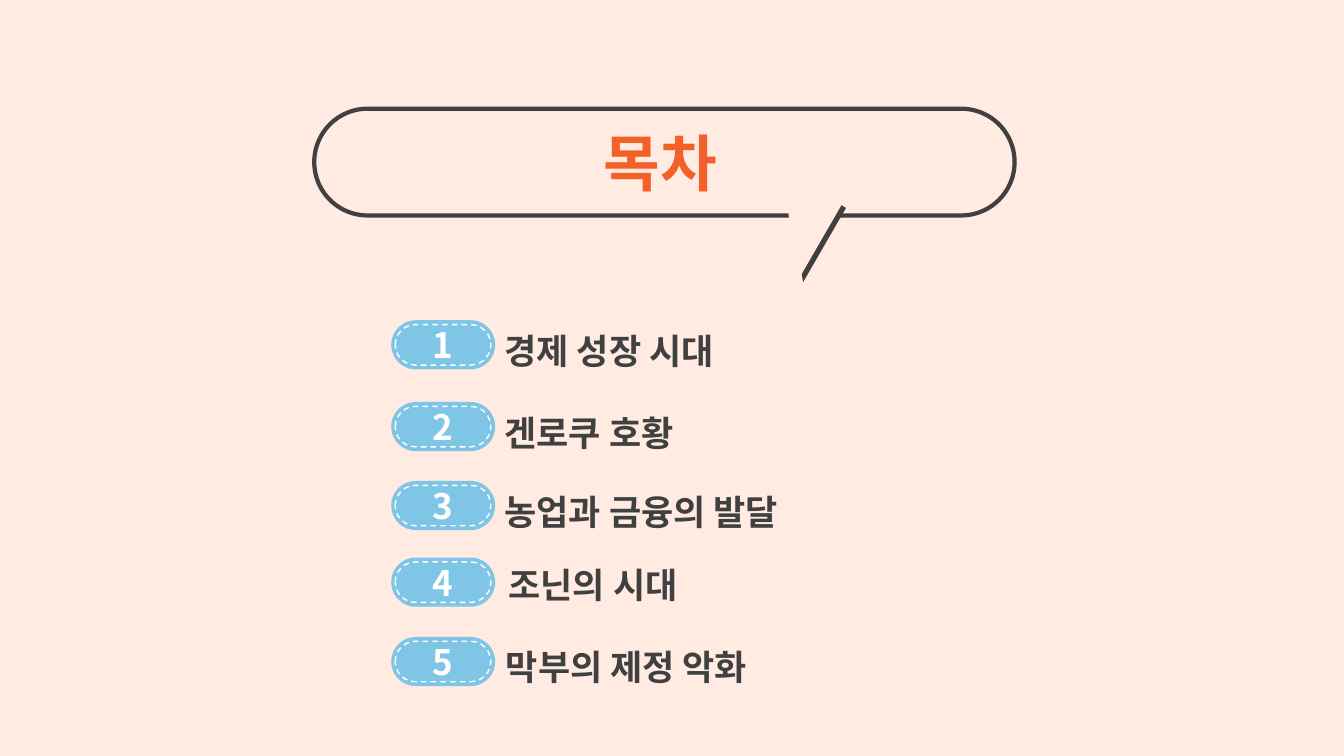
from lxml import etree
from pptx import Presentation, util as u
from pptx.dml.color import RGBColor
from pptx.enum import dml, shapes, text
from pptx.oxml.ns import qn

COLORS = {"paper": "FFEBE2", "ink": "404040", "title": "F46128", "badge": "7FC6E6", "white": "FFFFFF"}


class Deck:
    font = "Noto Sans CJK KR"

    def __init__(self):
        self.prs = Presentation()
        self.prs.slide_width, self.prs.slide_height = u.Cm(33.87), u.Cm(19.05)
        self.slide = self.prs.slides.add_slide(self.prs.slide_layouts[6])
        background = self.slide.background.fill
        background.solid()
        background.fore_color.rgb = self.color("paper")

    def color(self, name):
        return RGBColor.from_string(COLORS[name])

    def group(self):
        return self.slide.shapes.add_group_shape().shapes

    def shape(self, parent, kind, box, adj, fill=None, line=None, width=1, dash=None):
        part = parent.add_shape(kind, *map(u.Cm, box))
        part.adjustments[0] = adj
        part.shadow.inherit = False
        if fill:
            part.fill.solid()
            part.fill.fore_color.rgb = self.color(fill)
        else:
            part.fill.background()
        if line:
            part.line.color.rgb = self.color(line)
            part.line.width = u.Pt(width)
            part.line.dash_style = dash
        else:
            part.line.fill.background()
        return part

    def pill(self, parent, box, **style):
        return self.shape(parent, shapes.MSO_SHAPE.ROUNDED_RECTANGLE, box, 0.5, **style)

    def hard_shadow(self, part, color, distance, angle):
        effects = part._element.spPr.find(qn("a:effectLst"))
        shadow = etree.SubElement(effects, qn("a:outerShdw"), blurRad="0", dist=str(u.Pt(distance)),
                                  dir=str(angle * 60000), algn="tl", rotWithShape="0")
        etree.SubElement(shadow, qn("a:srgbClr"), val=COLORS[color])

    def set_text(self, frame, words, size, color, align):
        paragraph = frame.paragraphs[0]
        paragraph.text = words
        paragraph.alignment = align
        font = paragraph.font
        font.name, font.size, font.bold = self.font, u.Pt(size), True
        font.color.rgb = self.color(color)
        etree.SubElement(font._element, qn("a:ea"), typeface=self.font)

    def label(self, parent, box, words, size, color, align=text.PP_ALIGN.LEFT):
        frame = parent.add_textbox(*map(u.Cm, box)).text_frame
        frame.word_wrap = False
        frame.auto_size = text.MSO_AUTO_SIZE.SHAPE_TO_FIT_TEXT
        self.set_text(frame, words, size, color, align)

    def bubble(self):
        bubble = self.group()
        self.pill(bubble, (7.92, 2.74, 17.65, 2.69), fill="paper", line="ink", width=3)
        tail = self.shape(bubble, shapes.MSO_SHAPE.ISOSCELES_TRIANGLE, (19.02, 4.55, 1.78, 2.16), 0, fill="paper")
        tail.rotation = 210
        self.hard_shadow(tail, "ink", 4, 45)

    def entry(self, number, top, topic, left, label_top, width):
        entry = self.group()
        badge = self.pill(entry, (9.86, top, 2.62, 1.24), fill="badge")
        badge.text_frame.vertical_anchor = text.MSO_ANCHOR.MIDDLE
        self.set_text(badge.text_frame, str(number), 25, "white", text.PP_ALIGN.CENTER)
        self.pill(entry, (9.96, top + 0.11, 2.41, 1.02), line="white", dash=dml.MSO_LINE.DASH)
        self.label(entry, (left, label_top, width, 1.32), topic, 25, "ink")


def main():
    deck = Deck()
    deck.bubble()
    deck.label(deck.slide.shapes, (14.81, 3.02, 3.66, 2.13), "목차", 44, "title", text.PP_ALIGN.CENTER)
    contents = [
        (8.07, "경제 성장 시대", 12.47, 8.18, 6.48),
        (10.13, "겐로쿠 호황", 12.47, 10.24, 5.28),
        (12.12, "농업과 금융의 발달", 12.47, 12.24, 8.26),
        (14.05, "조닌의 시대", 12.57, 14.07, 5.28),
        (16.05, "막부의 제정 악화", 12.5, 16.15, 7.37),
    ]
    for number, row in enumerate(contents, 1):
        deck.entry(number, *row)
    deck.prs.save("out.pptx")


if __name__ == "__main__":
    main()
